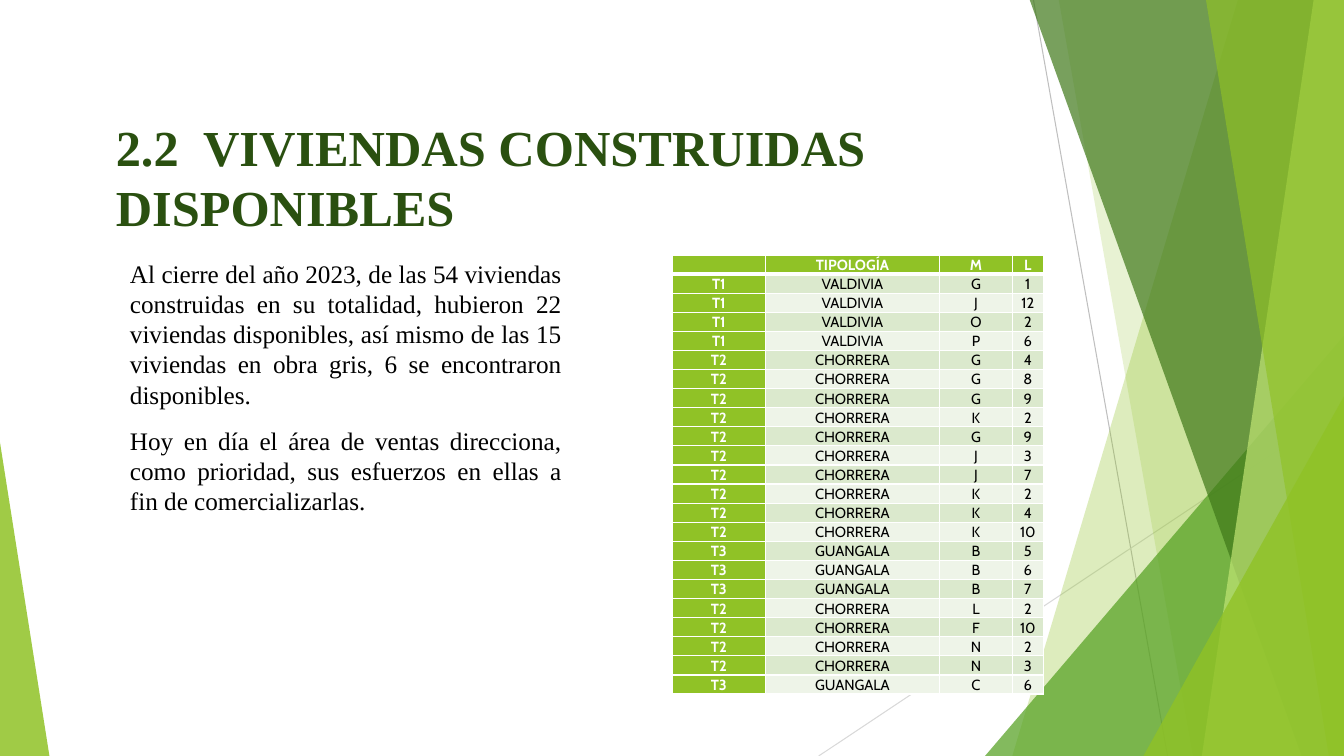
from lxml.etree import SubElement, fromstring
from pptx import Presentation
from pptx.dml.color import RGBColor
from pptx.enum.shapes import MSO_CONNECTOR as Connector, MSO_SHAPE as Shape
from pptx.enum.text import MSO_ANCHOR as Anchor, MSO_AUTO_SIZE as AutoSize, PP_ALIGN as Align
from pptx.oxml.ns import nsdecls, qn
from pptx.util import Inches, Pt

WHITE = RGBColor(0xFF, 0xFF, 0xFF)
BLACK = RGBColor(0, 0, 0)
LIME = RGBColor(0x90, 0xC2, 0x26)
PALE_LIME = RGBColor(0xC0, 0xE4, 0x74)
GREEN = RGBColor(0x54, 0xA0, 0x21)
FOREST = RGBColor(0x3F, 0x78, 0x19)
TITLE_GREEN = RGBColor(0x2A, 0x50, 0x10)
BAND_DARK = RGBColor(0xDB, 0xE9, 0xCD)
BAND_LIGHT = RGBColor(0xEE, 0xF4, 0xE8)
GRAY = RGBColor(0xBF, 0xBF, 0xBF)
LIGHT_GRAY = RGBColor(0xD9, 0xD9, 0xD9)

WIDTH, HEIGHT, TOP = 13.33, 7.5, -0.01
SERIF, SANS = "Times New Roman", "Cabin"

TITLE = "2.2  VIVIENDAS CONSTRUIDAS DISPONIBLES"
BODY = [
    "Al cierre del año 2023, de las 54 viviendas construidas en su totalidad, hubieron 22 "
    "viviendas disponibles, así mismo de las 15 viviendas en obra gris, 6 se encontraron disponibles.",
    "Hoy en día el área de ventas direcciona, como prioridad, sus esfuerzos en ellas a fin "
    "de comercializarlas.",
]
TYPOLOGIES = {"T1": "VALDIVIA", "T2": "CHORRERA", "T3": "GUANGALA"}
HOMES = [
    ("T1", "G1 J12 O2 P6"),
    ("T2", "G4 G8 G9 K2 G9 J3 J7 K2 K4 K10"),
    ("T3", "B5 B6 B7"),
    ("T2", "L2 F10 N2 N3"),
    ("T3", "C6"),
]
COLUMNS = [0.92, 1.73, 0.72, 0.31]
TABLE_HEIGHT = 4.35


def apply(target, values):
    for name, value in values.items():
        setattr(target, name, value)


class SlideBuilder:
    def __init__(self, page):
        self.page = page
        self.shapes = page.shapes

    def line(self, start, end, color):
        line = self.shapes.add_connector(Connector.STRAIGHT, *map(Inches, start + end))
        line.line.width = Pt(0.75)
        line.line.color.rgb = color
        SubElement(line.element.spPr, qn("a:effectLst"))

    def paint(self, shape, color, opacity):
        shape.shadow.inherit = False
        shape.line.fill.background()
        shape.fill.solid()
        shape.fill.fore_color.rgb = color
        tone = shape.element.spPr.find(".//" + qn("a:srgbClr"))
        SubElement(tone, qn("a:alpha"), val=str(opacity * 1000))

    def panel(self, top_left, bottom_left, color, opacity):
        corners = [(WIDTH, TOP), (WIDTH, HEIGHT), (bottom_left, HEIGHT)]
        outline = self.shapes.build_freeform(Inches(top_left), Inches(TOP))
        outline.add_line_segments([(Inches(x), Inches(y)) for x, y in corners])
        self.paint(outline.convert_to_shape(), color, opacity)

    def triangle(self, left, top, width, apex, color, opacity):
        size = map(Inches, (left, top, width, HEIGHT - top))
        shape = self.shapes.add_shape(Shape.ISOSCELES_TRIANGLE, *size)
        shape.adjustments[0] = apex
        self.paint(shape, color, opacity)

    def span(self, para, text, font, color, layout):
        apply(para, layout)
        span = para.add_run()
        span.text = text
        apply(span.font, font)
        span.font.color.rgb = color

    def text(self, bounds, texts, font, color, layout, auto_size=AutoSize.NONE):
        frame = self.shapes.add_textbox(*map(Inches, bounds)).text_frame
        apply(frame, {"word_wrap": True, "auto_size": auto_size})
        for index, text in enumerate(texts):
            para = frame.add_paragraph() if index else frame.paragraphs[0]
            self.span(para, text, font, color, layout)

    def borders(self, cell, row):
        widths = {"L": 1, "R": 1, "T": 3 if row == 1 else 1, "B": 3 if row == 0 else 1}
        for position, (side, width) in enumerate(widths.items()):
            cell.tcPr.insert(position, fromstring(
                f'<a:ln{side} {nsdecls("a")} w="{Pt(width)}"><a:solidFill>'
                f'<a:srgbClr val="{WHITE}"/></a:solidFill></a:ln{side}>'))

    def cell(self, cell, text, row, column):
        heading = row == 0 or column == 0
        apply(cell, {"margin_left": Inches(0.03), "margin_right": Inches(0.03),
                     "margin_top": 0, "margin_bottom": 0, "vertical_anchor": Anchor.BOTTOM})
        cell.fill.solid()
        cell.fill.fore_color.rgb = LIME if heading else BAND_DARK if row % 2 else BAND_LIGHT
        self.borders(cell._tc, row)
        para = cell.text_frame.paragraphs[0]
        if text:
            self.span(para, text, {"name": SANS, "size": Pt(10.5), "bold": heading},
                      WHITE if heading else BLACK,
                      {"alignment": Align.CENTER, "line_spacing": 1.07})
        else:
            SubElement(para._p, qn("a:endParaRPr"), sz="1050")

    def table(self, left, top, rows):
        bounds = map(Inches, (left, top, sum(COLUMNS), TABLE_HEIGHT))
        table = self.shapes.add_table(len(rows), len(COLUMNS), *bounds).table
        for column, width in zip(table.columns, COLUMNS):
            column.width = Inches(width)
        for row, values in enumerate(rows):
            table.rows[row].height = Inches(TABLE_HEIGHT / len(rows))
            for column, text in enumerate(values):
                self.cell(table.cell(row, column), text, row, column)


def main():
    deck = Presentation()
    apply(deck, {"slide_width": Inches(WIDTH), "slide_height": Inches(HEIGHT)})
    builder = SlideBuilder(deck.slides.add_slide(deck.slide_layouts[6]))

    builder.line((10.25, 0), (11.58, HEIGHT), GRAY)
    builder.line((WIDTH, 4.03), (8.12, HEIGHT), LIGHT_GRAY)
    builder.panel(12.28, 10.04, LIME, 30)
    builder.panel(10.5, 11.83, LIME, 20)
    builder.triangle(9.77, 3.33, 3.56, 1, GREEN, 72)
    builder.panel(10.21, 12.91, FOREST, 70)
    builder.panel(13.03, 11.92, PALE_LIME, 70)
    builder.panel(11.96, 13.18, LIME, 65)
    builder.triangle(11.34, 3.93, 1.99, 1, LIME, 80)
    builder.triangle(0, 4.39, 0.49, 0, LIME, 85)

    builder.text((1.05, 1.1, 11, 0.98), [TITLE],
                 {"name": SERIF, "size": Pt(36), "bold": True}, TITLE_GREEN,
                 {"alignment": Align.LEFT})
    rows = [("", "TIPOLOGÍA", "M", "L")]
    rows += [(kind, TYPOLOGIES[kind], home[0], home[1:])
             for kind, homes in HOMES for home in homes.split()]
    builder.table(6.67, 2.53, rows)
    builder.text((1.19, 2.51, 4.48, 2.68), BODY, {"name": SERIF, "size": Pt(18)}, BLACK,
                 {"alignment": Align.JUSTIFY, "space_before": Pt(11.3)},
                 AutoSize.SHAPE_TO_FIT_TEXT)
    deck.save("out.pptx")


if __name__ == "__main__":
    main()
